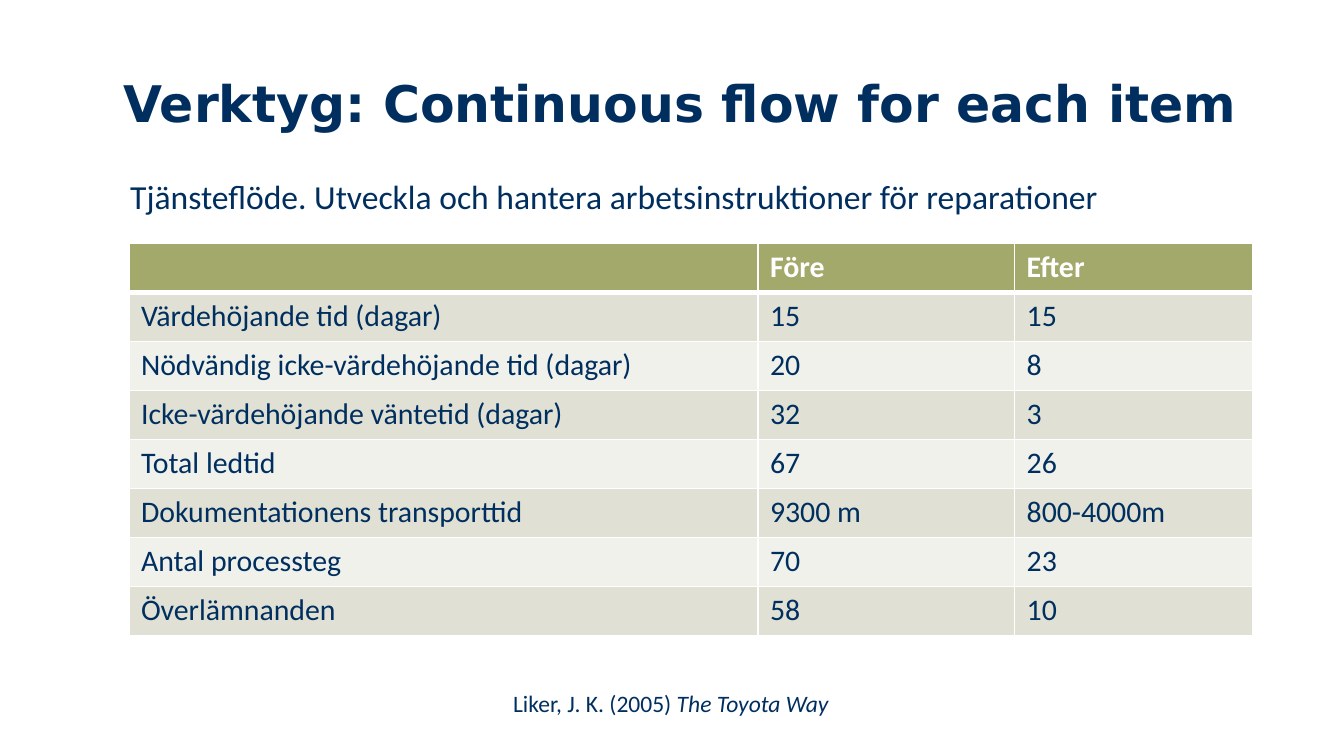
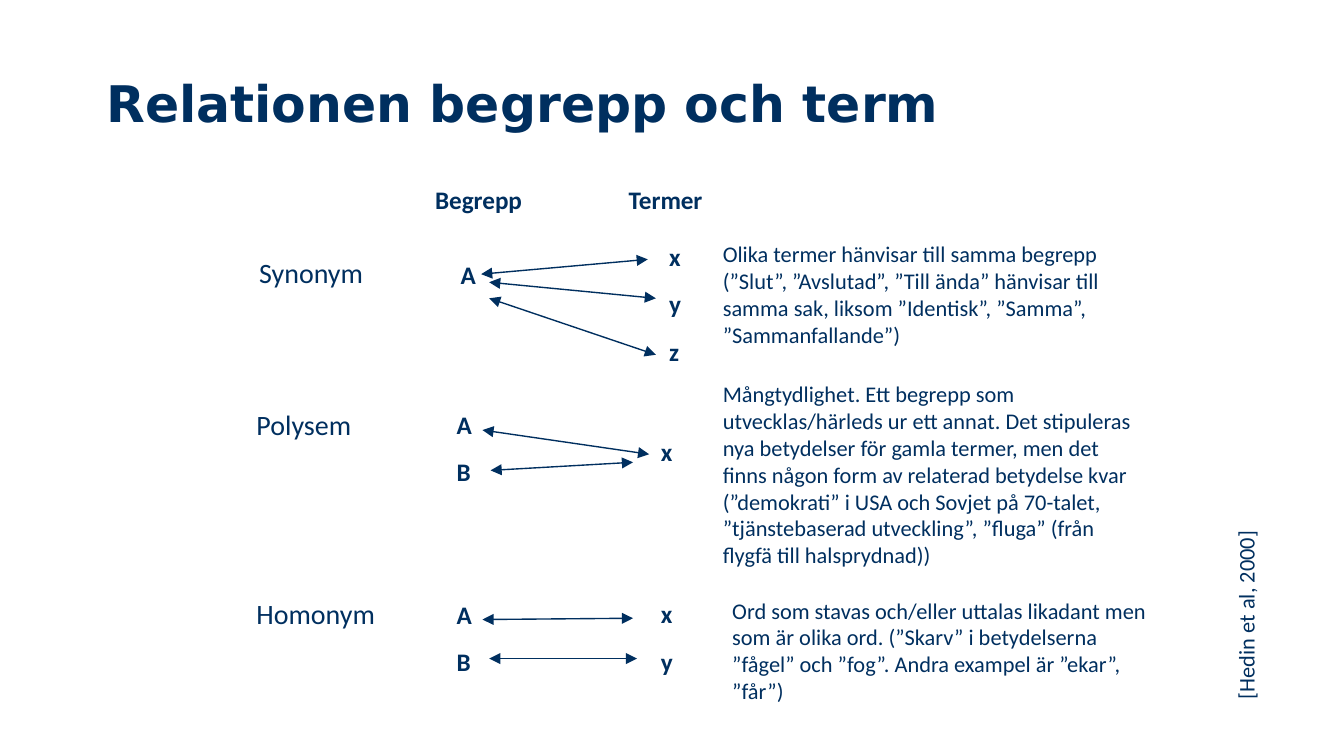
from lxml.etree import SubElement
from pptx import Presentation
from pptx.dml.color import RGBColor
from pptx.enum.shapes import MSO_CONNECTOR as Connector
from pptx.enum.text import MSO_ANCHOR as Anchor, MSO_AUTO_SIZE as AutoSize, PP_ALIGN as Align
from pptx.oxml.ns import qn
from pptx.util import Emu, Pt

EMU_PER_PX = 9144
NAVY = RGBColor(0x00, 0x2F, 0x5F)
OLIVE = RGBColor(0xA3, 0xA8, 0x6B)
BAND_DARK = RGBColor(0xE0, 0xE1, 0xD4)
BAND_LIGHT = RGBColor(0xF0, 0xF1, 0xEB)
WHITE = RGBColor(0xFF, 0xFF, 0xFF)

BODY = {"name": "Calibri", "size": Pt(12), "bold": False, "italic": False}
TITLE = {"name": "DejaVu Sans", "size": Pt(27), "bold": True}
CATEGORY = BODY | {"size": Pt(15)}
SYMBOL = BODY | {"size": Pt(13.5), "bold": True}
CITATION = BODY | {"size": Pt(12.6)}
LEAD = BODY | {"size": Pt(18)}
CELL = BODY | {"size": Pt(16)}

FLOW_COLUMNS = (468, 191, 177)
FLOW_ROWS = (
    ("", "Före", "Efter"),
    ("Värdehöjande tid (dagar)", "15", "15"),
    ("Nödvändig icke-värdehöjande tid (dagar)", "20", "8"),
    ("Icke-värdehöjande väntetid (dagar)", "32", "3"),
    ("Total ledtid", "67", "26"),
    ("Dokumentationens transporttid", "9300 m", "800-4000m"),
    ("Antal processteg", "70", "23"),
    ("Överlämnanden", "58", "10"),
)

CATEGORIES = ((183, 185, "Synonym"), (181, 298, "Polysem"), (181, 439, "Homonym"))
HEADINGS = ((314, 132, "Begrepp"), (458, 132, "Termer"))
SYMBOLS = (
    (333, 188, "A"), (488, 175, "x"), (488, 210, "y"), (488, 245, "z"),
    (330, 300, "A"), (330, 335, "B"), (482, 320, "x"),
    (330, 441, "A"), (330, 476, "B"), (482, 440, "x"), (482, 476, "y"),
)
RELATIONS = (
    (358, 204, 482, 193), (364, 210, 488, 222), (364, 222, 488, 264),
    (359, 320, 483, 338), (365, 350, 471, 344),
    (359, 461, 471, 460), (364, 490, 474, 490),
)
EXPLANATIONS = (
    ((528, 174, 333, 91),
     "Olika termer hänvisar till samma begrepp (”Slut”, ”Avslutad”, ”Till ända” "
     "hänvisar till samma sak, liksom ”Identisk”, ”Samma”, ”Sammanfallande”)"),
    ((528, 278, 331, 151),
     "Mångtydlighet. Ett begrepp som utvecklas/härleds ur ett annat. Det stipuleras "
     "nya betydelser för gamla termer, men det finns någon form av relaterad betydelse "
     "kvar (”demokrati” i USA och Sovjet på 70-talet, ”tjänstebaserad utveckling”, "
     "”fluga” (från flygfä till halsprydnad))"),
    ((535, 439, 334, 91),
     "Ord som stavas och/eller uttalas likadant men som är olika ord. (”Skarv” i "
     "betydelserna ”fågel” och ”fog”. Andra exampel är ”ekar”, ”får”)"),
)


def px(length):
    """Turn px into EMU."""
    return Emu(length * EMU_PER_PX)


def apply(target, values):
    """Set every attribute named in a dict."""
    for attribute, value in values.items():
        setattr(target, attribute, value)


def add_run(paragraph, text, style, color=NAVY):
    """Append one formatted run to a paragraph."""
    run = paragraph.add_run()
    run.text = text
    apply(run.font, style)
    run.font.color.rgb = color


def add_titled_slide(deck, title, area):
    """Add a title-only slide with its title placed and formatted."""
    slide = deck.slides.add_slide(deck.slide_layouts[5])
    heading = slide.shapes.title
    apply(heading, dict(zip(("left", "top", "width", "height"), map(px, area))))
    frame = heading.text_frame
    apply(frame, {"word_wrap": True, "auto_size": AutoSize.NONE,
                  "vertical_anchor": Anchor.TOP,
                  "margin_left": px(10), "margin_right": px(10),
                  "margin_top": px(6), "margin_bottom": 0})
    paragraph = frame.paragraphs[0]
    paragraph.alignment = Align.LEFT
    add_run(paragraph, title, TITLE)
    return slide


def add_label(slide, area, runs, wrap=True, rotation=0):
    """Add a text box from (text, style) runs."""
    label = slide.shapes.add_textbox(*map(px, area))
    label.rotation = rotation
    apply(label.text_frame, {"word_wrap": wrap, "auto_size": AutoSize.SHAPE_TO_FIT_TEXT})
    for text, style in runs:
        add_run(label.text_frame.paragraphs[0], text, style)


def add_relation(slide, ends):
    """Draw a thin line with an arrowhead at both ends."""
    relation = slide.shapes.add_connector(Connector.STRAIGHT, *map(px, ends))
    relation.line.color.rgb = NAVY
    relation.line.width = Pt(0.75)
    outline = relation.line._ln
    for end in ("a:headEnd", "a:tailEnd"):
        SubElement(outline, qn(end), type="triangle")
    SubElement(outline.getparent(), qn("a:effectLst"))


def add_cell_borders(cell, bottom_width):
    """Give a cell white borders, with its own bottom width."""
    properties = cell._tc.get_or_add_tcPr()
    for side in "LRTB":
        width = Pt(bottom_width if side == "B" else 1)
        border = SubElement(properties, qn(f"a:ln{side}"), w=str(width))
        fill = SubElement(border, qn("a:solidFill"))
        SubElement(fill, qn("a:srgbClr"), val=str(WHITE))


def format_cell(cell, text, is_header, fill):
    """Write one table cell with its fill and borders."""
    apply(cell, {"margin_left": px(9), "margin_right": px(9),
                 "margin_top": px(4), "margin_bottom": px(4)})
    add_cell_borders(cell, 3 if is_header else 1)
    cell.fill.solid()
    cell.fill.fore_color.rgb = fill
    paragraph = cell.text_frame.paragraphs[0]
    if text:
        add_run(paragraph, text, CELL | {"bold": is_header}, WHITE if is_header else NAVY)
    else:
        SubElement(paragraph._p, qn("a:endParaRPr"), sz="1600")


def add_flow_table(slide, area):
    """Add the banded before-and-after table."""
    table = slide.shapes.add_table(len(FLOW_ROWS), len(FLOW_COLUMNS), *map(px, area)).table
    for column, width in zip(table.columns, FLOW_COLUMNS):
        column.width = px(width)
    for row_number, (row, texts) in enumerate(zip(table.rows, FLOW_ROWS)):
        is_header = row_number == 0
        band = BAND_DARK if row_number % 2 else BAND_LIGHT
        for cell, text in zip(row.cells, texts):
            format_cell(cell, text, is_header, OLIVE if is_header else band)


def build_flow_slide(deck):
    """Build the slide on continuous flow."""
    slide = add_titled_slide(deck, "Verktyg: Continuous flow for each item", (82, 48, 870, 50))
    add_label(slide, (372, 508, 257, 31),
              [("Liker, J. K. (2005) ", CITATION),
               ("The Toyota Way", CITATION | {"italic": True})], wrap=False)
    add_flow_table(slide, (96, 181, sum(FLOW_COLUMNS), 292))
    add_label(slide, (87, 126, 765, 40),
              [("Tjänsteflöde. Utveckla och hantera arbetsinstruktioner för reparationer", LEAD)])


def build_relation_slide(deck):
    """Build the slide on concepts and terms."""
    slide = add_titled_slide(deck, "Relationen begrepp och term", (69, 48, 675, 94))
    for labels, size, style in ((CATEGORIES, (159, 35), CATEGORY),
                                (HEADINGS, (160, 33), SYMBOL),
                                (SYMBOLS, (77, 33), SYMBOL)):
        for left, top, text in labels:
            add_label(slide, (left, top, *size), [(text, style)])
    for ends in RELATIONS:
        add_relation(slide, ends)
    for area, text in EXPLANATIONS:
        add_label(slide, area, [(text, BODY)])
    add_label(slide, (850, 438, 154, 30), [("[Hedin et al, 2000]", BODY)], rotation=270)


def main():
    """Build and save the deck."""
    deck = Presentation()
    apply(deck, {"slide_width": px(1000), "slide_height": Emu(px(1000) * 9 // 16)})
    build_flow_slide(deck)
    build_relation_slide(deck)
    deck.save("out.pptx")


if __name__ == "__main__":
    main()
